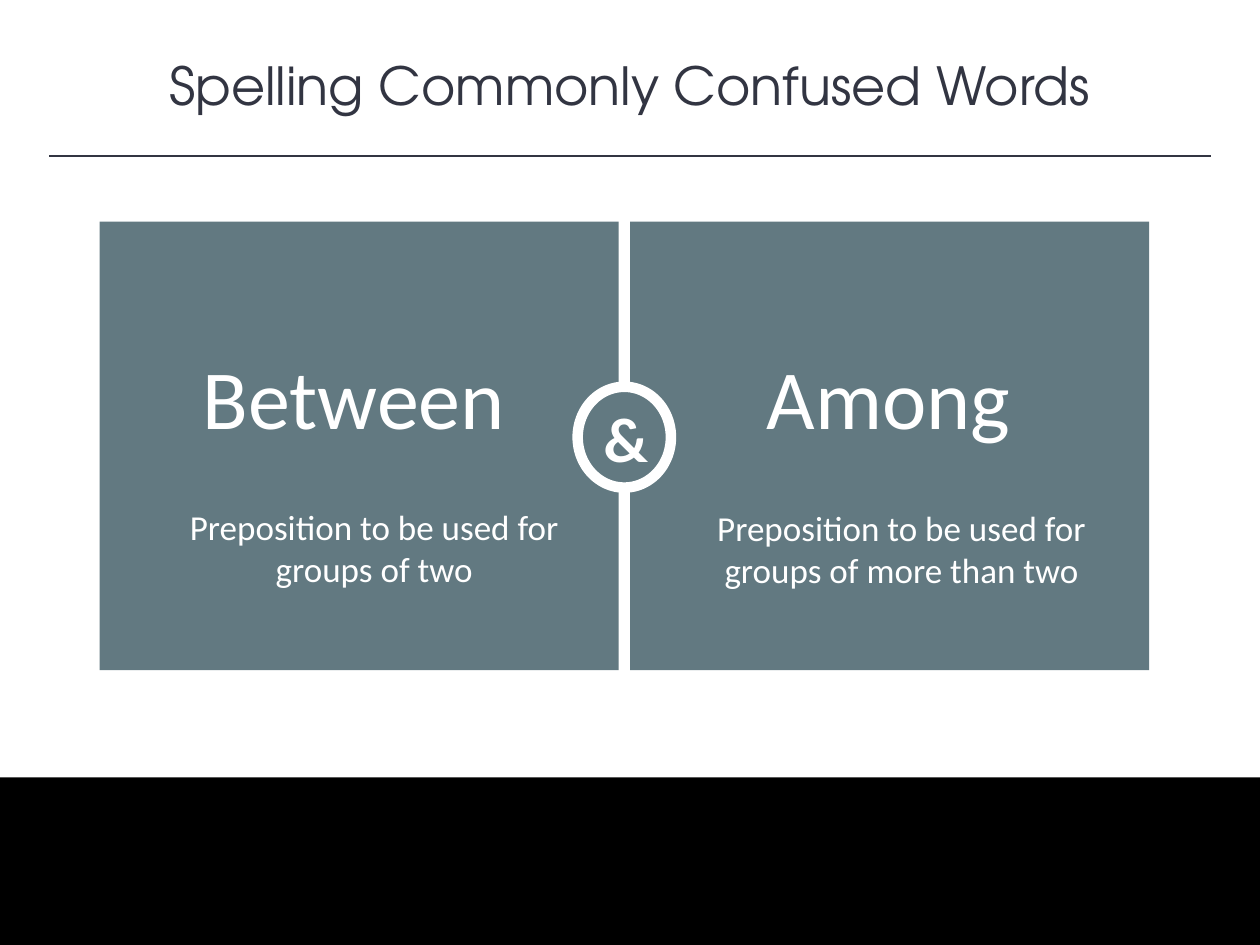
from lxml.etree import SubElement
from pptx import Presentation
from pptx.dml.color import RGBColor
from pptx.enum.shapes import MSO_CONNECTOR, MSO_SHAPE
from pptx.enum.text import MSO_ANCHOR, PP_ALIGN
from pptx.oxml.ns import qn
from pptx.util import Inches, Pt

WHITE = RGBColor(0xFF, 0xFF, 0xFF)
BLACK = RGBColor(0x00, 0x00, 0x00)
NAVY = RGBColor(0x32, 0x35, 0x42)
SLATE = RGBColor(0x62, 0x79, 0x81)

PAGE_WIDTH, PAGE_HEIGHT = 10, 7.5
BODY_FONT = "Calibri"
TITLE_FONT = "TeX Gyre Adventor"

RULE_MARGIN, RULE_TOP = 0.39, 1.24
FOOTER_TOP = 6.17
PANEL_LEFT, PANEL_TOP = 0.79, 1.76
PANEL_WIDTH, PANEL_HEIGHT = 4.12, 3.56
COLUMN_STEP = 4.21
BADGE_WIDTH, BADGE_HEIGHT = 0.74, 0.8
WORD_WIDTH, WORD_HEIGHT = 3.28, 1.19

WORDS = ["Between", "Among"]
MEANINGS = [
    ("Preposition to be used for groups of two", 1.22, 3.96, 3.5),
    ("Preposition to be used for groups of more than two", 5.21, 3.97, 3.89),
]


def write(box, text, size, color=WHITE, font=BODY_FONT, bold=False,
          spacing=None, anchor=MSO_ANCHOR.MIDDLE):
    frame = box.text_frame
    frame.word_wrap = True
    frame.vertical_anchor = anchor
    para = frame.paragraphs[0]
    para.alignment = PP_ALIGN.CENTER
    if spacing:
        para.line_spacing = spacing
    span = para.add_run()
    span.text = text
    span.font.name = font
    span.font.size = Pt(size)
    span.font.bold = bold
    span.font.color.rgb = color


def add_block(page, kind, left, top, width, height, fill, outline=None):
    block = page.shapes.add_shape(
        kind, Inches(left), Inches(top), Inches(width), Inches(height))
    block.shadow.inherit = False
    block.fill.solid()
    block.fill.fore_color.rgb = fill
    if outline:
        block.line.color.rgb = outline
        block.line.width = Pt(6)
    else:
        block.line.fill.background()
    return block


def add_label(page, left, top, width, height):
    return page.shapes.add_textbox(
        Inches(left), Inches(top), Inches(width), Inches(height))


def add_rule(page):
    rule = page.shapes.add_connector(
        MSO_CONNECTOR.STRAIGHT, Inches(RULE_MARGIN), Inches(RULE_TOP),
        Inches(PAGE_WIDTH - RULE_MARGIN), Inches(RULE_TOP))
    rule.line.color.rgb = NAVY
    rule.line.width = Pt(1)
    SubElement(rule._element.spPr, qn("a:effectLst"))


def add_panels(page):
    for column in range(len(WORDS)):
        add_block(page, MSO_SHAPE.RECTANGLE, PANEL_LEFT + column * COLUMN_STEP,
                  PANEL_TOP, PANEL_WIDTH, PANEL_HEIGHT, SLATE)


def add_badge(page):
    center = PANEL_LEFT + (COLUMN_STEP + PANEL_WIDTH) / 2
    badge = add_block(page, MSO_SHAPE.OVAL, center - BADGE_WIDTH / 2, 3.07,
                      BADGE_WIDTH, BADGE_HEIGHT, SLATE, WHITE)
    write(badge, "&", 36, bold=True)


def add_words(page):
    for column, word in enumerate(WORDS):
        box = add_block(page, MSO_SHAPE.RECTANGLE, 1.17 + column * 4.24, 2.35,
                        WORD_WIDTH, WORD_HEIGHT, SLATE)
        write(box, word, 48, spacing=1.5)


def add_meanings(page):
    for text, left, top, width in MEANINGS:
        write(add_label(page, left, top, width, 0.77), text, 20)


def main():
    deck = Presentation()
    deck.slide_width = Inches(PAGE_WIDTH)
    deck.slide_height = Inches(PAGE_HEIGHT)
    page = deck.slides.add_slide(deck.slide_layouts[6])

    title = add_label(page, 0, 0.37, PAGE_WIDTH, 0.61)
    write(title, "Spelling Commonly Confused Words", 30, NAVY, TITLE_FONT,
          anchor=MSO_ANCHOR.TOP)
    add_block(page, MSO_SHAPE.RECTANGLE, 0, FOOTER_TOP, PAGE_WIDTH,
              PAGE_HEIGHT - FOOTER_TOP, BLACK)
    add_rule(page)
    add_panels(page)
    add_badge(page)
    add_words(page)
    add_meanings(page)

    deck.save("out.pptx")


if __name__ == "__main__":
    main()
